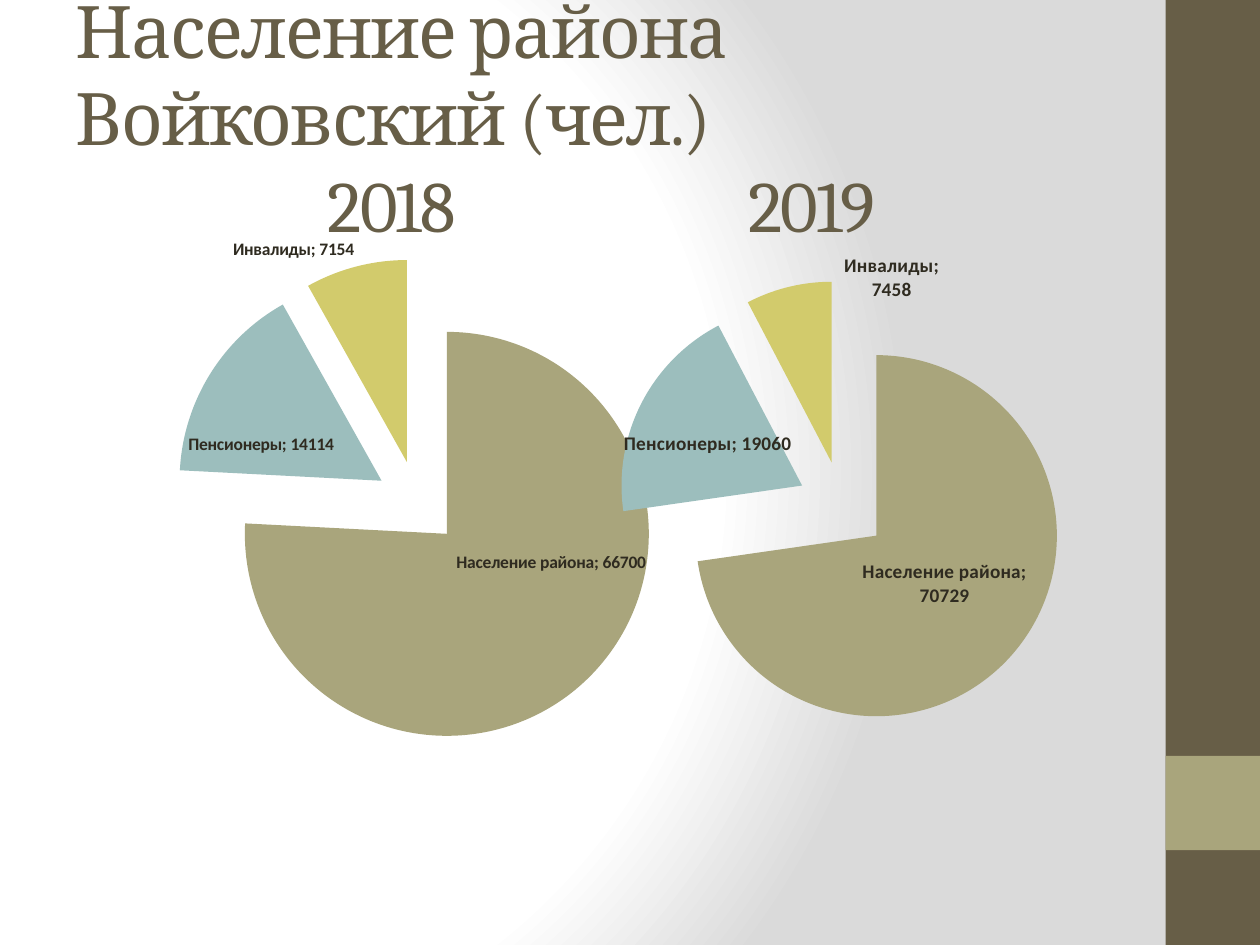
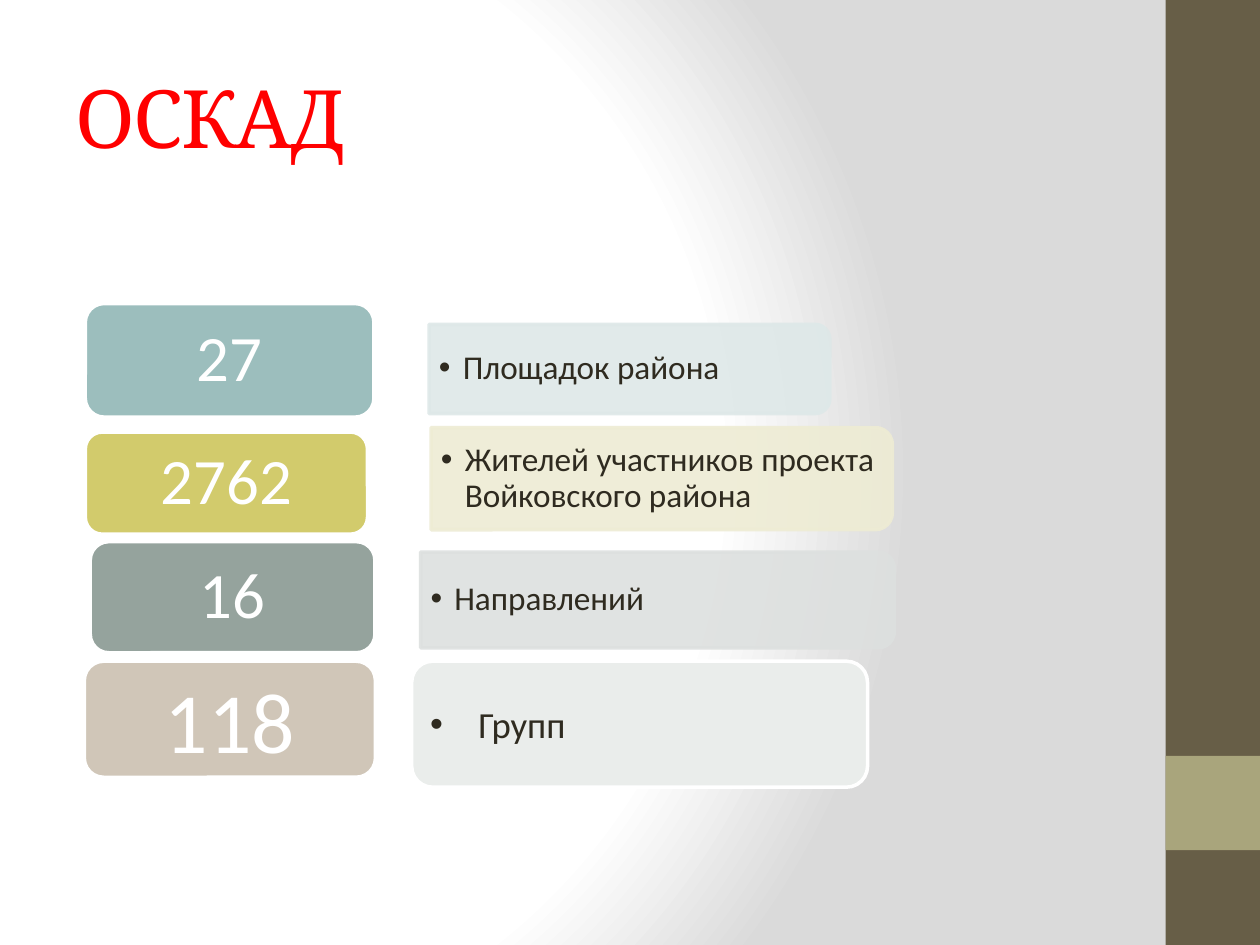
from dataclasses import dataclass

from lxml.etree import SubElement
from pptx import Presentation
from pptx.chart.data import CategoryChartData
from pptx.dml.color import RGBColor
from pptx.enum.chart import XL_CHART_TYPE, XL_LABEL_POSITION
from pptx.enum.shapes import MSO_SHAPE
from pptx.enum.text import MSO_ANCHOR, MSO_AUTO_SIZE, PP_ALIGN
from pptx.oxml import parse_xml
from pptx.oxml.ns import nsdecls, qn
from pptx.util import Cm, Pt

COLORS = {
    "white": "FFFFFF",
    "edge_gray": "DADADA",
    "brown": "675E47",
    "olive": "A9A57C",
    "teal": "9CBEBD",
    "mustard": "D2CB6C",
    "sage": "95A39D",
    "sand": "D0C6B8",
    "pale_teal": "DEE8E8",
    "pale_mustard": "EEECD4",
    "pale_sage": "DDE0DF",
    "pale_gray": "EAEDEB",
    "ink": "2F2B20",
    "red": "FF0000",
}
HEADING_FONT, BODY_FONT = "Cambria", "Calibri"
GROUPS = ("Население района", "Пенсионеры", "Инвалиды")
SLICE_COLORS = ("olive", "teal", "mustard")
LABEL_POSITIONS = (XL_LABEL_POSITION.CENTER, XL_LABEL_POSITION.CENTER,
                   XL_LABEL_POSITION.OUTSIDE_END)


@dataclass(frozen=True)
class Box:
    left: float
    top: float
    width: float
    height: float

    def lengths(self) -> tuple:
        return Cm(self.left), Cm(self.top), Cm(self.width), Cm(self.height)


@dataclass(frozen=True)
class Population:
    people: tuple
    frame: Box
    pie: Box
    explosion: int
    label_size: int
    label_shifts: tuple
    label_width: float = 0


@dataclass(frozen=True)
class Fact:
    number: str
    label: str
    color: str
    tint: str
    number_box: Box
    panel_box: Box
    number_size: int = 37
    label_size: int = 19
    indent: float = 0.48
    spacing: float = 0.9
    one_sided: bool = True


BANDS = ((Box(23.5, 0, 1.9, 19.05), "brown"), (Box(23.5, 15.24, 1.9, 1.9), "olive"))

POPULATIONS = (
    Population((66700, 14114, 7154), Box(0.51, 4.32, 14, 11.2),
               Box(0.21, 0.08, 0.71, 0.88), 21, 10,
               ((0.05, -0.08), (-0.05, 0.03), (0, 0))),
    Population((70729, 19060, 7458), Box(9.91, 4.32, 14, 11),
               Box(0.18, 0.12, 0.65, 0.83), 25, 11,
               ((0, -0.02), (-0.02, 0), (0.22, 0.04)), label_width=0.2),
)

FACTS = (
    Fact("27", "Площадок района", "teal", "pale_teal",
         Box(1.72, 6.12, 5.82, 2.29), Box(8.65, 6.54, 8.08, 1.8)),
    Fact("2762", "Жителей участников проекта Войковского района",
         "mustard", "pale_mustard",
         Box(1.72, 8.71, 5.69, 2.06), Box(8.69, 8.62, 9.3, 2.06)),
    Fact("16", "Направлений", "sage", "pale_sage",
         Box(1.82, 10.92, 5.74, 2.24), Box(8.48, 11.13, 9.55, 1.93)),
    Fact("118", "Групп", "sand", "pale_gray",
         Box(1.7, 13.33, 5.87, 2.34), Box(8.3, 13.33, 9.19, 2.54),
         number_size=49, label_size=21, indent=0.97, spacing=1.0, one_sided=False),
)


def rgb(color: str) -> RGBColor:
    return RGBColor.from_string(COLORS[color])


def style_font(font, name: str, size: float, color: str) -> None:
    font.name, font.size = name, Pt(size)
    font.color.rgb = rgb(color)


def add_block(slide, preset, box: Box, fill: str, line: str = ""):
    block = slide.shapes.add_shape(preset, *box.lengths())
    block.shadow.inherit = False
    block.fill.solid()
    block.fill.fore_color.rgb = rgb(fill)
    if line:
        block.line.color.rgb = rgb(line)
        block.line.width = Pt(2)
    else:
        block.line.fill.background()
    return block


def style_master(prs, first_slide) -> None:
    master = prs.slide_master
    master.background.fill.solid()
    background = master.element.xpath(".//p:bgPr")[0]
    stops = "".join(
        f'<a:gs pos="{position}000"><a:srgbClr val="{COLORS[color]}"/></a:gs>'
        for position, color in ((0, "white"), (75, "white"), (100, "edge_gray")))
    background.replace(background[0], parse_xml(
        f'<a:gradFill {nsdecls("a")} rotWithShape="1"><a:gsLst>{stops}</a:gsLst>'
        '<a:path path="circle"><a:fillToRect l="20000" t="50000" r="100000" '
        'b="50000"/></a:path></a:gradFill>'))
    tree = master.element.xpath("p:cSld/p:spTree")[0]
    for place, (box, color) in enumerate(BANDS, start=2):
        band = add_block(first_slide, MSO_SHAPE.RECTANGLE, box, color)
        tree.insert(place, band.element)


def write_title(slide, lines: tuple, size: float, color: str,
                tabs: tuple = ()) -> None:
    title = slide.shapes.title
    title.left, title.top, title.width, title.height = Box(
        1.27, 0.76, 21.16, 3.18).lengths()
    frame = title.text_frame
    frame.auto_size = MSO_AUTO_SIZE.NONE
    frame.vertical_anchor = MSO_ANCHOR.MIDDLE
    for number, line in enumerate(lines):
        paragraph = frame.add_paragraph() if number else frame.paragraphs[0]
        paragraph.alignment = PP_ALIGN.LEFT
        run = paragraph.add_run()
        run.text = line
        style_font(run.font, HEADING_FONT, size, color)
    for properties in title.element.xpath(".//a:rPr"):
        properties.set("spc", "-100")
    if tabs:
        stops = SubElement(title.element.xpath(".//a:pPr")[-1], qn("a:tabLst"))
        for position in tabs:
            SubElement(stops, qn("a:tab"), pos=str(Cm(position)), algn="l")


def manual_layout(values: dict, target: str = ""):
    items = "".join(f'<c:{key} val="{value}"/>' for key, value in values.items())
    return parse_xml(f'<c:layout {nsdecls("c")}><c:manualLayout>{target}{items}'
                     "</c:manualLayout></c:layout>")


def label_extent(width: float, height: float):
    return parse_xml(
        f'<c:extLst {nsdecls("c")}>'
        '<c:ext uri="{CE6537A1-D6FC-4f65-9D91-7224C49458BB}" '
        'xmlns:c15="http://schemas.microsoft.com/office/drawing/2012/chart">'
        f'<c15:layout><c:manualLayout><c:w val="{width}"/><c:h val="{height}"/>'
        "</c:manualLayout></c15:layout></c:ext></c:extLst>")


def add_population_pie(slide, population: Population) -> None:
    data = CategoryChartData()
    data.categories = GROUPS
    data.add_series("Series 1", population.people)
    chart = slide.shapes.add_chart(
        XL_CHART_TYPE.PIE, *population.frame.lengths(), data).chart
    chart.has_title = chart.has_legend = False
    style_font(chart.font, BODY_FONT, 18, "ink")
    plot = chart.plots[0]
    plot.vary_by_categories = True
    for number, color in enumerate(SLICE_COLORS):
        point = plot.series[0].points[number]
        point.format.fill.solid()
        point.format.fill.fore_color.rgb = rgb(color)
        point.format.line.fill.background()
        label = point.data_label
        style_font(label.font, BODY_FONT, population.label_size, "ink")
        label.font.bold = True
        label.position = LABEL_POSITIONS[number]

    root = chart.element
    root.xpath(".//c:ser/c:tx")[0].addnext(parse_xml(
        f'<c:explosion {nsdecls("c")} val="{population.explosion}"/>'))
    wrap = "square" if population.label_width else "none"
    for label, (x, y) in zip(root.xpath(".//c:dLbl"), population.label_shifts):
        label.find(qn("c:showCatName")).set("val", "1")
        label.find(qn("c:showVal")).set("val", "1")
        label.xpath(".//a:bodyPr")[0].set("wrap", wrap)
        SubElement(label, qn("c:separator")).text = "; "
        if population.label_width:
            label.append(label_extent(population.label_width, 0.1))
        if x or y:
            label.find(qn("c:idx")).addnext(manual_layout({"x": x, "y": y}))
    for leader in root.xpath(".//c:showLeaderLines"):
        leader.set("val", "0")
    plot_area = root.xpath(".//c:plotArea")[0]
    for automatic in plot_area.xpath("c:layout"):
        plot_area.remove(automatic)
    pie = population.pie
    plot_area.insert(0, manual_layout(
        {"xMode": "edge", "yMode": "edge", "x": pie.left, "y": pie.top,
         "w": pie.width, "h": pie.height}, '<c:layoutTarget val="inner"/>'))


def write_text(shape, text: str, size: float, color: str,
               alignment, spacing: float, margins: tuple) -> None:
    frame = shape.text_frame
    frame.word_wrap = True
    frame.vertical_anchor = MSO_ANCHOR.MIDDLE
    frame.margin_left = frame.margin_right = Cm(margins[0])
    frame.margin_top = frame.margin_bottom = Cm(margins[1])
    paragraph = frame.paragraphs[0]
    paragraph.alignment = alignment
    paragraph.line_spacing = spacing
    run = paragraph.add_run()
    run.text = text
    style_font(run.font, BODY_FONT, size, color)


def add_bullet(shape, indent: float) -> None:
    properties = shape.element.xpath(".//a:pPr")[0]
    properties.set("marL", str(Cm(indent)))
    properties.set("indent", str(-Cm(indent)))
    SubElement(properties, qn("a:buFont"), typeface="Arial")
    SubElement(properties, qn("a:buChar"), char="•")


def add_one_sided_panel(slide, box: Box, tint: str):
    upright = Box(box.left + (box.width - box.height) / 2,
                  box.top + (box.height - box.width) / 2, box.height, box.width)
    panel = add_block(slide, MSO_SHAPE.ROUND_2_SAME_RECTANGLE, upright, tint, tint)
    panel.rotation = 90
    for color in panel.element.xpath("p:spPr//a:srgbClr"):
        SubElement(color, qn("a:alpha"), val="90000")
    return slide.shapes.add_textbox(*box.lengths())


def add_fact(slide, fact: Fact) -> None:
    if fact.one_sided:
        label = add_one_sided_panel(slide, fact.panel_box, fact.tint)
        margins = (0.2, 0.1)
    else:
        label = add_block(slide, MSO_SHAPE.ROUNDED_RECTANGLE, fact.panel_box,
                          fact.tint, "white")
        margins = (0.25, 0.13)
    write_text(label, fact.label, fact.label_size, "ink", PP_ALIGN.LEFT,
               fact.spacing, margins)
    add_bullet(label, fact.indent)
    number = add_block(slide, MSO_SHAPE.ROUNDED_RECTANGLE, fact.number_box,
                       fact.color, "white")
    write_text(number, fact.number, fact.number_size, "white",
               PP_ALIGN.CENTER, fact.spacing, (0.38, 0.2))


def main() -> None:
    prs = Presentation()
    prs.slide_width, prs.slide_height = Cm(25.4), Cm(19.05)
    title_only = prs.slide_layouts[5]

    population_slide = prs.slides.add_slide(title_only)
    style_master(prs, population_slide)
    write_title(population_slide,
                ("Население района Войковский (чел.)", "\t2018\t2019"),
                41.4, "brown", tabs=(5.08, 13.56))
    for population in POPULATIONS:
        add_population_pie(population_slide, population)

    facts_slide = prs.slides.add_slide(title_only)
    write_title(facts_slide, ("ОСКАД",), 46, "red")
    for fact in FACTS:
        add_fact(facts_slide, fact)

    prs.save("out.pptx")


if __name__ == "__main__":
    main()
